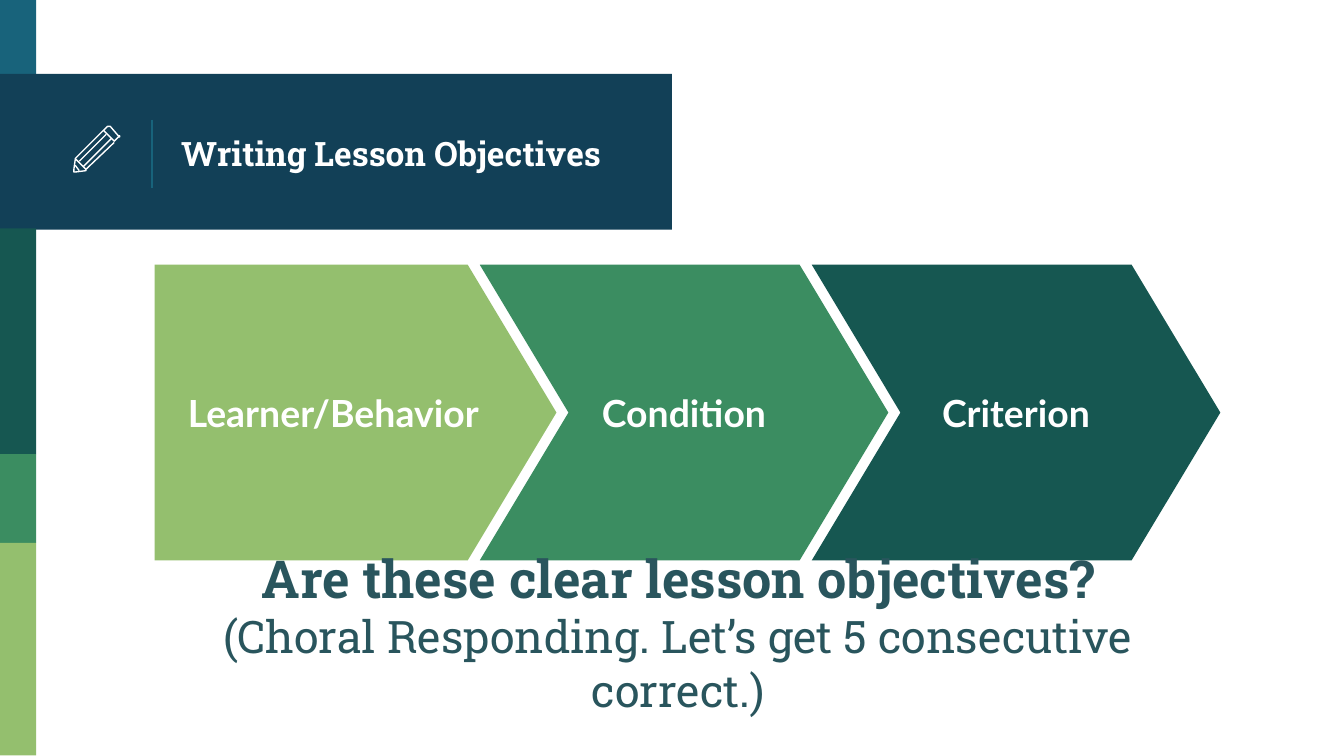
from dataclasses import dataclass

from lxml import etree
from pptx import Presentation
from pptx import util as u
from pptx.dml.color import RGBColor
from pptx.enum import shapes, text
from pptx.oxml.ns import qn


@dataclass(frozen=True)
class Theme:
    navy: str = "124057"
    blue: str = "18637B"
    dark_green: str = "165751"
    green: str = "3B8D61"
    light_green: str = "94BF6E"
    white: str = "FFFFFF"
    ink: str = "29555D"
    slab: str = "Roboto Slab"
    sans: str = "Lato"
    title: int = 18
    step: int = 20
    question: int = 28
    note: int = 24
    line: float = 0.75


def write(p, words, *, font, size, color, bold=False,
          align=text.PP_ALIGN.LEFT):
    """Add one formatted run to a paragraph."""
    p.alignment = align
    r = p.add_run()
    r.text = words
    r.font.name = font
    r.font.size = u.Pt(size)
    r.font.bold = bold
    r.font.color.rgb = RGBColor.from_string(color)


class Builder:
    def __init__(self, slide, theme):
        self.s = slide
        self.t = theme

    def frame(self, sp, anchor):
        tf = sp.text_frame
        tf.word_wrap = True
        tf.vertical_anchor = anchor
        tf.margin_left = tf.margin_right = u.Inches(0.1)
        tf.margin_top = tf.margin_bottom = u.Inches(0.1)
        return tf

    def shape(self, kind, box, color):
        sp = self.s.shapes.add_shape(kind, *map(u.Inches, box))
        sp.shadow.inherit = False
        sp.fill.solid()
        sp.fill.fore_color.rgb = RGBColor.from_string(color)
        sp.line.fill.background()
        return sp

    def textbox(self, box, anchor):
        sp = self.s.shapes.add_textbox(*map(u.Inches, box))
        return self.frame(sp, anchor)

    def arrow(self, kind, box, color, point, label):
        sp = self.shape(kind, box, color)
        sp.adjustments[0] = point
        tf = self.frame(sp, text.MSO_ANCHOR.MIDDLE)
        write(tf.paragraphs[0], label, font=self.t.sans, size=self.t.step,
              color=self.t.white, bold=True, align=text.PP_ALIGN.CENTER)

    def line(self, x1, y1, x2, y2, color):
        c = self.s.shapes.add_connector(
            shapes.MSO_CONNECTOR.STRAIGHT, *map(u.Inches, (x1, y1, x2, y2)))
        c.line.color.rgb = RGBColor.from_string(color)
        c.line.width = u.Pt(self.t.line)
        etree.SubElement(c._element.spPr, qn("a:effectLst"))

    def outlines(self, strokes):
        """Draw grouped outlines; points are in hundredths of an inch."""
        group = self.s.shapes.add_group_shape()
        for points, closed in strokes:
            fb = group.shapes.build_freeform(*points[0], scale=u.Inches(0.01))
            fb.add_line_segments(points[1:], close=closed)
            sp = fb.convert_to_shape()
            sp.shadow.inherit = False
            sp.fill.background()
            sp.line.color.rgb = RGBColor.from_string(self.t.white)
            sp.line.width = u.Pt(self.t.line)


def main():
    # Widescreen slide, 16 to 9
    prs = Presentation()
    prs.slide_width = u.Inches(10)
    prs.slide_height = u.Inches(10) * 9 // 16
    t = Theme()
    b = Builder(prs.slides.add_slide(prs.slide_layouts[6]), t)
    rect = shapes.MSO_SHAPE.RECTANGLE

    # Side stripe and title band
    for top, width, height, color in (
        (0, 0.27, 0.58, t.blue),
        (0.55, 5, 1.16, t.navy),
        (1.7, 0.27, 1.68, t.dark_green),
        (3.38, 0.27, 0.66, t.green),
        (4.04, 0.27, 1.58, t.light_green),
    ):
        b.shape(rect, (0, top, width, height), color)
    b.line(1.13, 0.89, 1.13, 1.4, t.blue)

    # Title
    tf = b.textbox((1.25, 0.58, 3.51, 1.12), text.MSO_ANCHOR.MIDDLE)
    write(tf.paragraphs[0], "Writing Lesson Objectives", font=t.slab,
          size=t.title, color=t.white, bold=True)

    # Three parts of an objective
    top, height = 1.97, 2.2
    b.arrow(shapes.MSO_SHAPE.PENTAGON, (1.15, top, 2.99, height),
            t.light_green, 0.3, "Learner/Behavior")
    for i, (label, color) in enumerate((("Condition", t.green),
                                        ("Criterion", t.dark_green))):
        b.arrow(shapes.MSO_SHAPE.CHEVRON,
                (3.57 + 2.47 * i, top, 3.04, height), color, 0.3, label)

    # Pencil icon: eraser, groove, barrel, groove, tip, collar
    b.outlines((
        ([(88, 101), (82, 94), (81, 94), (80, 94), (77, 97), (85, 105),
          (88, 102), (89, 102), (89, 101)], True),
        ([(83, 103), (62, 124)], False),
        ([(77, 97), (56, 118), (56, 119), (55, 126), (55, 128), (56, 128),
          (64, 127), (64, 126), (85, 106)], False),
        ([(59, 120), (79, 100)], False),
        ([(59, 127), (56, 123)], False),
        ([(56, 118), (64, 126)], False),
    ))

    # Closing question
    tf = b.textbox((1, 4.16, 8.09, 1.27), text.MSO_ANCHOR.BOTTOM)
    body = dict(font=t.slab, color=t.ink, align=text.PP_ALIGN.CENTER)
    write(tf.paragraphs[0], "Are these clear lesson objectives?",
          size=t.question, bold=True, **body)
    write(tf.add_paragraph(),
          "(Choral Responding. Let’s get 5 consecutive correct.)",
          size=t.note, **body)

    prs.save("out.pptx")


if __name__ == "__main__":
    main()
